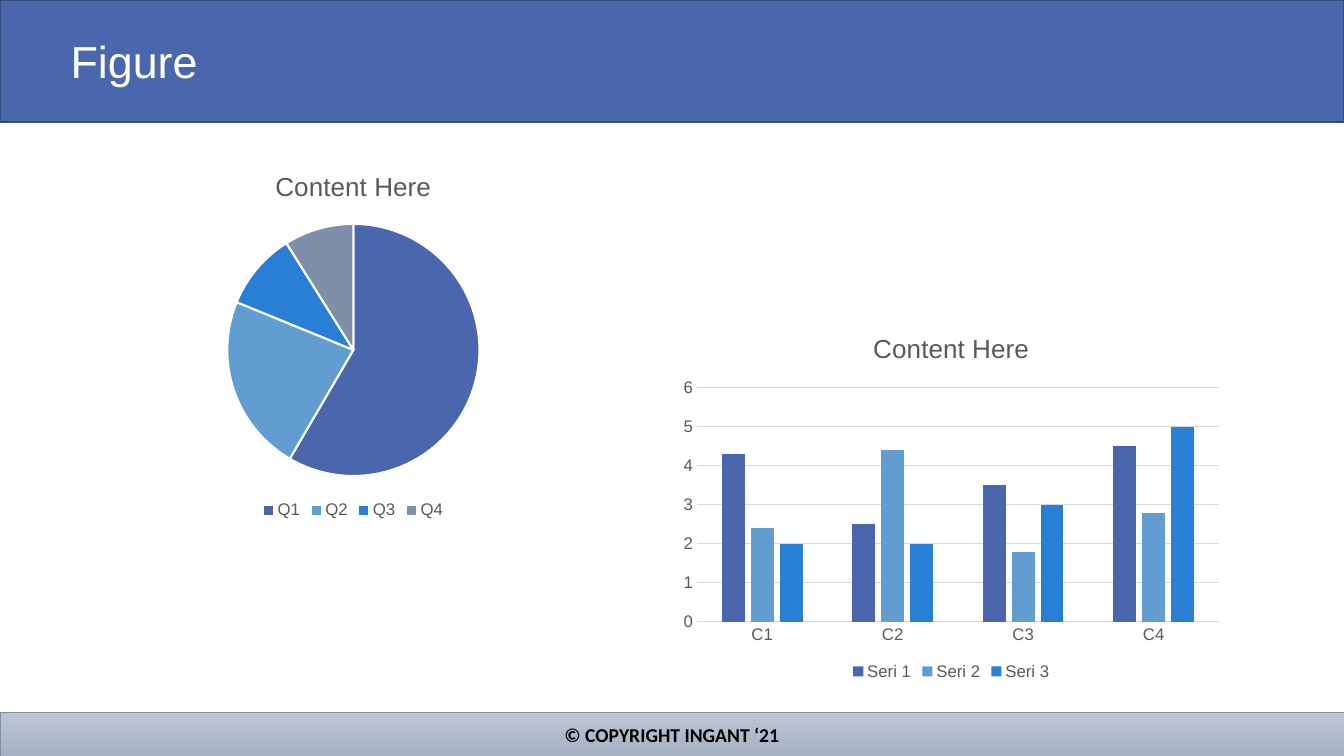
"""Build a slide with a title banner, a pie chart, a column chart and a footer."""
from pptx import Presentation
from pptx.chart.data import CategoryChartData
from pptx.dml.color import RGBColor
from pptx.enum.chart import XL_CHART_TYPE, XL_LEGEND_POSITION, XL_TICK_MARK
from pptx.enum.shapes import MSO_SHAPE
from pptx.enum.text import MSO_ANCHOR, MSO_AUTO_SIZE, PP_ALIGN
from pptx.util import Inches, Pt

PIE, COLUMNS = XL_CHART_TYPE.PIE, XL_CHART_TYPE.COLUMN_CLUSTERED
BOTTOM, NO_TICK = XL_LEGEND_POSITION.BOTTOM, XL_TICK_MARK.NONE
RECTANGLE, MIDDLE, NO_FIT = MSO_SHAPE.RECTANGLE, MSO_ANCHOR.MIDDLE, MSO_AUTO_SIZE.NONE
LEFT, CENTER = PP_ALIGN.LEFT, PP_ALIGN.CENTER

INDIGO = RGBColor(0x4A, 0x66, 0xAC)
INDIGO_EDGE = RGBColor(0x37, 0x4B, 0x7F)
SKY = RGBColor(0x62, 0x9D, 0xD1)
BLUE = RGBColor(0x29, 0x7F, 0xD5)
SLATE = RGBColor(0x7F, 0x8F, 0xA9)
SILVER = RGBColor(0xBE, 0xC5, 0xD2)
STEEL = RGBColor(0xA6, 0xB1, 0xC3)
GRAY = RGBColor(0x59, 0x59, 0x59)
GRID = RGBColor(0xD9, 0xD9, 0xD9)
WHITE = RGBColor(0xFF, 0xFF, 0xFF)
BLACK = RGBColor(0, 0, 0)
PALETTE = (INDIGO, SKY, BLUE, SLATE)

HEADING = "Figure"
COPYRIGHT = "© COPYRIGHT INGANT ‘21"
CHART_TITLE = "Content Here"
QUARTERS = {"Q1": 59, "Q2": 23, "Q3": 10, "Q4": 9}
GROUPS = ("C1", "C2", "C3", "C4")
SERIES = {
    "Seri 1": (4.3, 2.5, 3.5, 4.5),
    "Seri 2": (2.4, 4.4, 1.8, 2.8),
    "Seri 3": (2, 2, 3, 5),
}

WIDTH, HEIGHT = 13.33, 7.5
BANNER_HEIGHT, FOOTER_HEIGHT = 1.21, 0.43
CHART_HEIGHT = 3.68
HEADING_BOX = (0.6, 0.24, 12.41, 0.79)
PIE_BOX = (0, 1.51, 7.01, CHART_HEIGHT)
COLUMN_BOX = (6.67, 3.11, 5.53, CHART_HEIGHT)


def style_font(font, size, color, face="Arial", bold=False):
    font.name, font.size, font.bold = face, Pt(size), bold
    font.color.rgb = color


def paint(fill, color):
    fill.solid()
    fill.fore_color.rgb = color


def draw_line(line, color, width):
    paint(line.fill, color)
    line.width = Pt(width)


def add_band(slide, top, height, edge, edge_width):
    band = slide.shapes.add_shape(
        RECTANGLE, 0, Inches(top), Inches(WIDTH), Inches(height))
    band.shadow.inherit = False
    draw_line(band.line, edge, edge_width)
    return band


def add_banner(slide):
    banner = add_band(slide, 0, BANNER_HEIGHT, INDIGO_EDGE, 1)
    paint(banner.fill, INDIGO)
    heading = slide.shapes.title
    banner.element.addnext(heading.element)
    heading.left, heading.top, heading.width, heading.height = map(Inches, HEADING_BOX)
    frame = heading.text_frame
    frame.text = HEADING
    frame.auto_size, frame.vertical_anchor = NO_FIT, MIDDLE
    paragraph = frame.paragraphs[0]
    paragraph.alignment, paragraph.line_spacing = LEFT, 0.9
    style_font(paragraph.font, 32, WHITE)


def add_footer(slide):
    footer = add_band(slide, HEIGHT - FOOTER_HEIGHT, FOOTER_HEIGHT, SLATE, 0.5)
    footer.fill.gradient()
    footer.fill.gradient_angle = 270
    for stop, color in zip(footer.fill.gradient_stops, (SILVER, STEEL)):
        stop.color.rgb = color
    footer.text_frame.text = COPYRIGHT
    footer.text_frame.vertical_anchor = MIDDLE
    paragraph = footer.text_frame.paragraphs[0]
    paragraph.alignment = CENTER
    style_font(paragraph.font, 14, BLACK, "Calibri", True)


def add_titled_chart(slide, kind, box, categories, series):
    data = CategoryChartData()
    data.categories = categories
    for name, values in series.items():
        data.add_series(name, values)
    chart = slide.shapes.add_chart(kind, *map(Inches, box), data).chart
    style_font(chart.font, 10, BLACK)
    chart.has_title = True
    chart.chart_title.include_in_layout = False
    chart.chart_title.text_frame.text = CHART_TITLE
    style_font(chart.chart_title.text_frame.paragraphs[0].font, 18.6, GRAY)
    chart.has_legend = True
    chart.legend.position = BOTTOM
    chart.legend.include_in_layout = False
    style_font(chart.legend.font, 12, GRAY)
    return chart


def add_pie(slide):
    chart = add_titled_chart(
        slide, PIE, PIE_BOX, QUARTERS, {"Series 1": QUARTERS.values()})
    plot = chart.plots[0]
    plot.vary_by_categories = True
    for index, color in enumerate(PALETTE):
        wedge = plot.series[0].points[index].format
        paint(wedge.fill, color)
        draw_line(wedge.line, WHITE, 1.5)


def add_columns(slide):
    chart = add_titled_chart(slide, COLUMNS, COLUMN_BOX, GROUPS, SERIES)
    plot = chart.plots[0]
    plot.vary_by_categories = False
    plot.gap_width, plot.overlap = 219, -27
    for series, color in zip(plot.series, PALETTE):
        paint(series.format.fill, color)
    for axis in (chart.category_axis, chart.value_axis):
        axis.major_tick_mark = axis.minor_tick_mark = NO_TICK
        style_font(axis.tick_labels.font, 12, GRAY)
    draw_line(chart.category_axis.format.line, GRID, 0.75)
    chart.value_axis.format.line.fill.background()
    chart.value_axis.has_major_gridlines = True
    draw_line(chart.value_axis.major_gridlines.format.line, GRID, 0.75)


def main():
    deck = Presentation()
    deck.slide_width, deck.slide_height = Inches(WIDTH), Inches(HEIGHT)
    slide = deck.slides.add_slide(deck.slide_layouts.get_by_name("Title Only"))
    add_banner(slide)
    add_footer(slide)
    add_pie(slide)
    add_columns(slide)
    deck.save("out.pptx")


if __name__ == "__main__":
    main()
